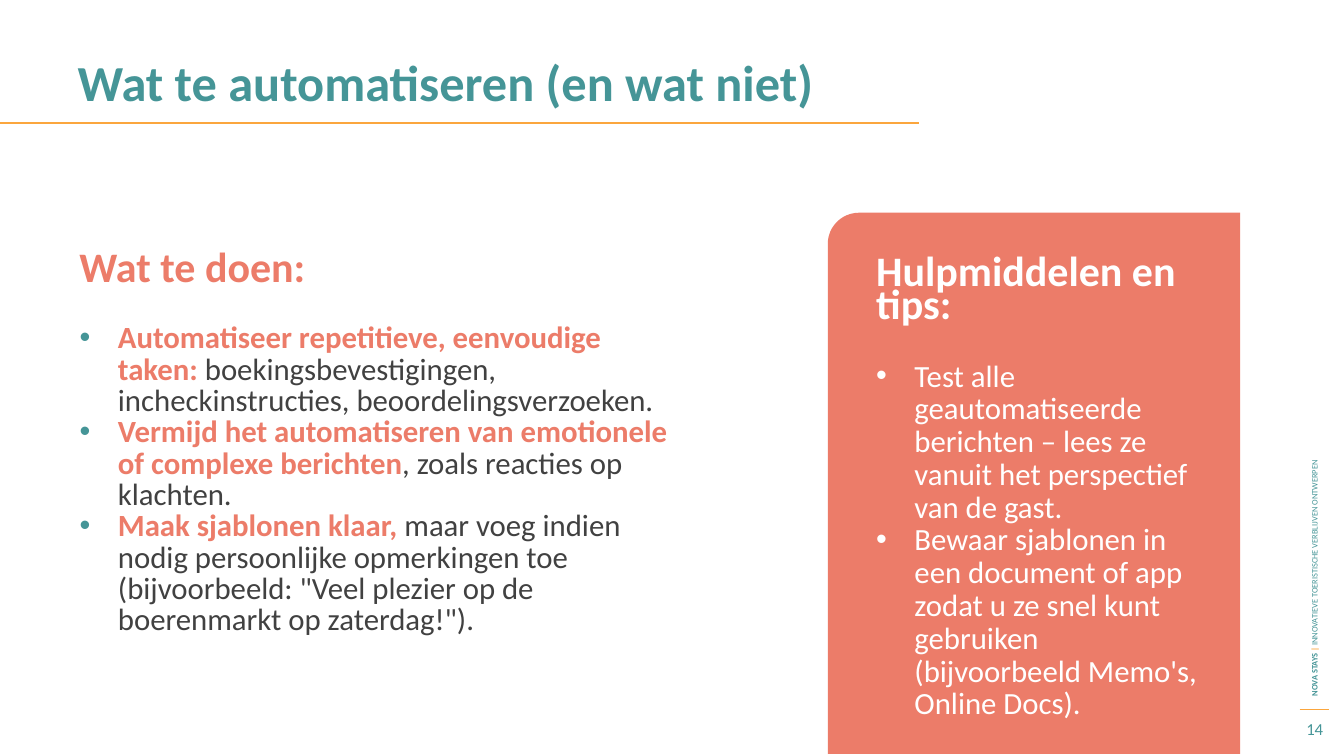
from lxml import etree
from pptx import Presentation
from pptx import util as u
from pptx.dml.color import RGBColor
from pptx.enum import shapes, text
from pptx.oxml import ns

TEAL, CORAL, ORANGE = "459597", "EC7C69", "FBA63D"
DARK, WHITE = "414141", "FFFFFF"


def colour(hex_code):
    return RGBColor.from_string(hex_code)


class Style:
    """Holds the look of the deck and the current page."""

    font = "Calibri"
    hang = u.Inches(0.38)

    def __init__(self, page):
        self.page = page

    def place(self, box, left, top, width, height, middle=False):
        box.left, box.top = u.Inches(left), u.Inches(top)
        box.width, box.height = u.Inches(width), u.Inches(height)
        frame = box.text_frame
        frame.word_wrap = True
        frame.auto_size = text.MSO_AUTO_SIZE.NONE
        frame.vertical_anchor = text.MSO_ANCHOR.MIDDLE if middle else text.MSO_ANCHOR.TOP
        return frame

    def text_box(self, left, top, width, height, middle=False):
        box = self.page.shapes.add_textbox(0, 0, 0, 0)
        self.place(box, left, top, width, height, middle)
        return box

    def paragraph(self, frame, spans, size, leading=None, bullet=None, before=0,
                  align=text.PP_ALIGN.LEFT):
        """Add a paragraph of (words, colour, bold) spans; bullet is its colour."""
        para = frame.paragraphs[0]
        if para.runs:
            para = frame.add_paragraph()
        para.alignment = align
        para.space_before = u.Pt(before)
        if leading:
            para.line_spacing = u.Pt(leading)
        self.bullet(para, bullet)
        para.font.name, para.font.size = self.font, u.Pt(size)
        same_colour = len({span[1] for span in spans}) == 1
        same_weight = len({span[2] for span in spans}) == 1
        for words, hex_code, bold in spans:
            span = para.add_run()
            span.text = words
            (para if same_colour else span).font.color.rgb = colour(hex_code)
            (para if same_weight else span).font.bold = bold

    def bullet(self, para, hex_code):
        props = para._p.get_or_add_pPr()
        hang = self.hang if hex_code else 0
        props.set("marL", str(hang))
        props.set("indent", str(-hang))
        if not hex_code:
            etree.SubElement(props, ns.qn("a:buNone"))
            return
        tint = etree.SubElement(props, ns.qn("a:buClr"))
        etree.SubElement(tint, ns.qn("a:srgbClr"), val=hex_code)
        etree.SubElement(props, ns.qn("a:buFont"), typeface="Arial")
        etree.SubElement(props, ns.qn("a:buChar"), char="•")

    def rule(self, start, end, y, width):
        line = self.page.shapes.add_connector(
            shapes.MSO_CONNECTOR.STRAIGHT,
            u.Inches(start), u.Inches(y), u.Inches(end), u.Inches(y))
        line.line.color.rgb = colour(ORANGE)
        line.line.width = u.Pt(width)
        etree.SubElement(line._element.spPr, ns.qn("a:effectLst"))

    def card(self, left, top, width, height, radius):
        # A quarter turn brings the single round corner to the top left
        shift = (width - height) / 2
        card = self.page.shapes.add_shape(
            shapes.MSO_SHAPE.ROUND_1_RECTANGLE,
            u.Inches(left + shift), u.Inches(top - shift),
            u.Inches(height), u.Inches(width))
        card.rotation = 270
        card.adjustments[0] = radius / min(width, height)
        card.shadow.inherit = False
        card.fill.solid()
        card.fill.fore_color.rgb = colour(CORAL)
        card.line.fill.background()
        # Keep the card behind the placeholders
        self.page.shapes._spTree.insert(2, card._element)


def main():
    deck = Presentation()
    deck.slide_width, deck.slide_height = u.Inches(13.33), u.Inches(7.5)
    page = deck.slides.add_slide(deck.slide_layouts.get_by_name("Two Content"))
    style = Style(page)
    title, actions, tips = page.placeholders

    # Title and its rule
    frame = style.place(title, 0.67, 0.54, 12, 0.88)
    style.paragraph(frame, [("Wat te automatiseren (en wat niet)", TEAL, True)], 36, 37.2)
    style.rule(0, 9.11, 1.22, 1.5)

    # Left column: what to do
    heading = style.text_box(0.69, 2.43, 6.14, 0.88)
    style.paragraph(heading.text_frame, [("Wat te doen:", CORAL, True)], 30, 29)
    frame = style.place(actions, 0.69, 3.16, 6.14, 4)
    for lead, rest in (
        ("Automatiseer repetitieve, eenvoudige taken: ",
         "boekingsbevestigingen, incheckinstructies, beoordelingsverzoeken."),
        ("Vermijd het automatiseren van emotionele of complexe berichten",
         ", zoals reacties op klachten."),
        ("Maak sjablonen klaar, ",
         "maar voeg indien nodig persoonlijke opmerkingen toe "
         "(bijvoorbeeld: \"Veel plezier op de boerenmarkt op zaterdag!\")."),
    ):
        style.paragraph(frame, [(lead, CORAL, True), (rest, DARK, False)], 22, 22.4, TEAL)

    # Right card: tools and tips
    style.card(8.21, 2.11, 4.09, 5.37, 0.31)
    frame = style.place(tips, 8.59, 2.55, 3.45, 3.59)
    style.paragraph(frame, [("Hulpmiddelen en tips:", WHITE, True)], 30, 23.4)
    for tip, before in (
        ("Test alle geautomatiseerde berichten – lees ze vanuit het perspectief "
         "van de gast.", 23.4),
        ("Bewaar sjablonen in een document of app zodat u ze snel kunt gebruiken "
         "(bijvoorbeeld Memo's, Online Docs).", 0),
    ):
        style.paragraph(frame, [(tip, WHITE, False)], 22, 23.4, WHITE, before)

    # Side strip and page number
    strip = style.text_box(10.15, 4.02, 5.77, 0.2, middle=True)
    strip.rotation = 270
    style.paragraph(strip.text_frame, [
        ("NOVA STAYS ", TEAL, True),
        ("| ", ORANGE, True),
        ("INNOVATIEVE TOERISTISCHE VERBLIJVEN ONTWERPEN", TEAL, False),
    ], 6)
    style.rule(12.89, 13.18, 7.04, 0.75)
    number = style.text_box(12.78, 7.06, 0.52, 0.34, middle=True)
    style.paragraph(number.text_frame, [("14", TEAL, False)], 12,
                    align=text.PP_ALIGN.CENTER)

    deck.save("out.pptx")


if __name__ == "__main__":
    main()
